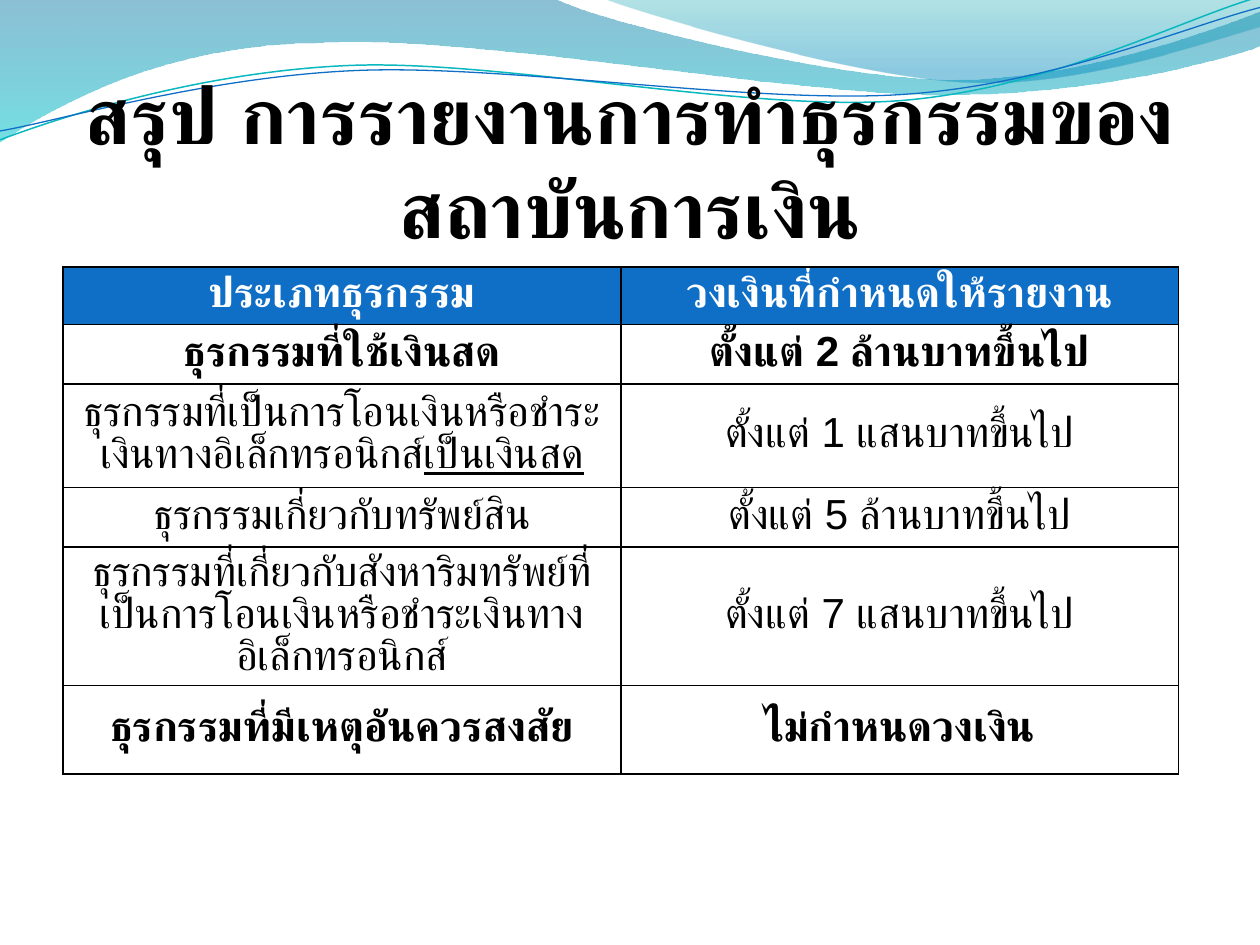
import math

from lxml import etree
from pptx import Presentation
from pptx import util as u
from pptx.dml.color import RGBColor
from pptx.enum import lang, text
from pptx.oxml import ns

Pt = u.Pt
INK = {"black": "000000", "white": "FFFFFF", "blue": "0F6FC6", "teal": "0AB8BF",
       "sea": "0074A1", "aqua": "00C6CF", "jade": "00A1A9", "sky": "008BBF"}
FONT = "Arial"
TURN = -2.7


def trace(start, *legs, hub=None):
    """Draw an outline in inches; a leg is one end point or a Bezier's three points.

    With a hub, the shape is laid level and then turned about it."""
    spots = [start] + [spot for leg in legs for spot in zip(leg[::2], leg[1::2])]
    if hub:
        sin, cos = math.sin(math.radians(-TURN)), math.cos(math.radians(-TURN))
        gaps = [(x - hub[0], y - hub[1]) for x, y in spots]
        spots = [(hub[0] + x * cos - y * sin, hub[1] + x * sin + y * cos) for x, y in gaps]
    spots = [(x * 7200, y * 7200) for x, y in spots]
    pen = slide.shapes.build_freeform(*spots[0], scale=Pt(0.01))
    pen.add_line_segments(spots[1:], close=not hub)
    shape = pen.convert_to_shape()
    shape.shadow.inherit = False
    shape.rotation = TURN if hub else 0
    steps = iter(list(shape._element.iter(ns.qn("a:lnTo"))))
    for leg in legs:
        step = next(steps)
        if len(leg) == 6:
            step.tag  # a straight step becomes the first handle of a curve
            curve = etree.Element(ns.qn("a:cubicBezTo"))
            step.addprevious(curve)
            for part in (step, next(steps), next(steps)):
                curve.append(part[0])
                part.getparent().remove(part)
    return shape


def style(para, size, color, bold):
    """Set the font for both Latin and Thai script."""
    para.alignment = text.PP_ALIGN.CENTER
    font = para.font
    font.name, font.size, font.bold = FONT, Pt(size), bold
    font.color.rgb = RGBColor.from_string(INK[color])
    font.language_id = lang.MSO_LANGUAGE_ID.THAI
    mark = para._p.pPr.find(ns.qn("a:defRPr"))
    etree.SubElement(mark, ns.qn("a:cs"), typeface=FONT)


deck = Presentation()
deck.slide_width, deck.slide_height = Pt(720), Pt(540)
slide = deck.slides.add_slide(deck.slide_layouts[6])

# Waves: tinted bands, then thin lines
broad = trace((0, -0.01), (4.4, -0.01), (4.76, 0.17, 6.64, 0.63, 7.58, 0.63),
              (8.53, 0.63, 9.58, 0.26, 10, 0.09), (10.01, 0.36),
              (9.83, 0.44, 8.7, 0.76, 7.46, 0.75), (6.22, 0.75, 3.82, 0.28, 2.57, 0.34),
              (1.29, 0.35, 0.46, 0.83, -0.01, 1.13), (0, -0.01))
small = trace((4.79, -0.01), (5.09, 0.11, 6.82, 0.62, 7.69, 0.65),
              (8.56, 0.69, 9.61, 0.32, 10, 0.21), (10, 0), (4.79, -0.01))
for band, stops in ((broad, ((0, "sea", 45), (100, "aqua", 55))),
                    (small, ((0, "jade", 30), (80, "sky", 45)))):
    band.line.fill.background()
    band.fill.gradient()
    grad = band._element.spPr.find(ns.qn("a:gradFill"))
    for child in list(grad):
        grad.remove(child)
    group = etree.SubElement(grad, ns.qn("a:gsLst"))
    for place, name, solid in stops:
        stop = etree.SubElement(group, ns.qn("a:gs"), pos=str(place * 1000))
        tint = etree.SubElement(stop, ns.qn("a:srgbClr"), val=INK[name])
        etree.SubElement(tint, ns.qn("a:alpha"), val=str(solid * 1000))
    etree.SubElement(grad, ns.qn("a:lin"), ang="5400000", scaled="0")

upper = trace((0, 1.11), (0.48, 0.93, 1.58, 0.57, 2.77, 0.52),
              (3.95, 0.47, 5.93, 0.89, 7.13, 0.8), (8.33, 0.71, 9.38, 0.15, 9.98, -0.02),
              hub=(4.99, 0.58))
lower = trace((0, 1.04), (0.47, 0.96, 1.64, 0.61, 2.83, 0.56),
              (4.03, 0.51, 5.97, 0.83, 7.17, 0.75), (8.36, 0.67, 9.41, 0.21, 10, 0.06),
              hub=(5, 0.59))
for wave, name, width in ((upper, "teal", 0.85), (lower, "blue", 0.75)):
    wave.fill.background()
    wave.line.color.rgb = RGBColor.from_string(INK[name])
    wave.line.width = Pt(width)

# Title
frame = slide.shapes.add_textbox(Pt(36), Pt(55.5), Pt(648), Pt(90)).text_frame
frame.word_wrap = True
frame.vertical_anchor = text.MSO_ANCHOR.BOTTOM
frame.margin_left = frame.margin_right = frame.margin_bottom = 0
frame.margin_top = Pt(3.6)
title = frame.paragraphs[0]
title.add_run().text = "สรุป การรายงานการทำธุรกรรมของสถาบันการเงิน"
style(title, 45, "black", True)

# Table: row height, bold, then the runs of each cell
ROWS = [
    (33, True, ["ประเภทธุรกรรม"], ["วงเงินที่กำหนดให้รายงาน"]),
    (34, True, ["ธุรกรรมที่ใช้เงินสด"], ["ตั้งแต่ 2 ล้านบาทขึ้นไป"]),
    (59, False, ["ธุรกรรมที่เป็นการโอนเงินหรือชำระเงินทางอิเล็กทรอนิกส์", "เป็นเงินสด"],
     ["ตั้งแต่ 1 แสนบาทขึ้นไป"]),
    (34, False, ["ธุรกรรมเกี่ยวกับทรัพย์สิน"], ["ตั้งแต่ 5 ล้านบาทขึ้นไป"]),
    (79, False, ["ธุรกรรมที่เกี่ยวกับสังหาริมทรัพย์ที่เป็นการโอนเงินหรือชำระเงินทางอิเล็กทรอนิกส์"],
     ["ตั้งแต่ 7 แสนบาทขึ้นไป"]),
    (50.5, True, ["ธุรกรรมที่มีเหตุอันควรสงสัย"], ["ไม่กำหนดวงเงิน"]),
]
tall = sum(row[0] for row in ROWS)
table = slide.shapes.add_table(len(ROWS), 2, Pt(36), Pt(152.5), Pt(637.5), Pt(tall)).table
table.first_row = table.horz_banding = False
for r, (height, bold, *cells) in enumerate(ROWS):
    table.rows[r].height = Pt(height)
    for c, runs in enumerate(cells):
        cell = table.cell(r, c)
        cell.vertical_anchor = text.MSO_ANCHOR.MIDDLE
        para = cell.text_frame.paragraphs[0]
        para.line_spacing = Pt(24)
        for i, words in enumerate(runs):
            run = para.add_run()
            run.text = words
            if i:
                run.font.underline = True
        style(para, 24, "black" if r else "white", bold)
        for side in ("lnL", "lnR", "lnT", "lnB"):
            edge = etree.SubElement(cell._tc.get_or_add_tcPr(), ns.qn("a:" + side), w=str(Pt(1)))
            paint = etree.SubElement(edge, ns.qn("a:solidFill"))
            etree.SubElement(paint, ns.qn("a:srgbClr"), val=INK["black"])
        if r:
            cell.fill.background()
        else:
            cell.fill.solid()
            cell.fill.fore_color.rgb = RGBColor.from_string(INK["blue"])

deck.save("out.pptx")
